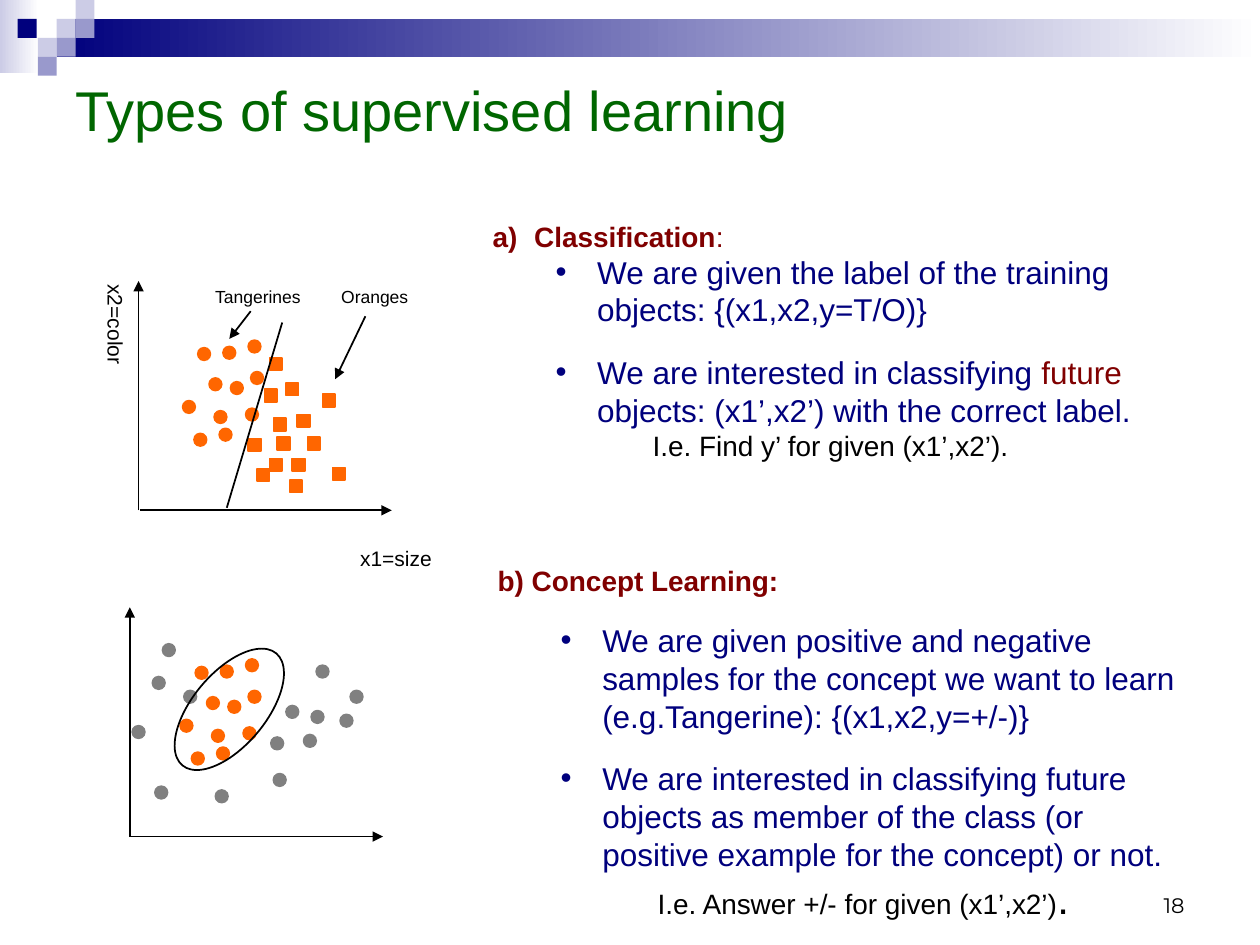
from dataclasses import dataclass

from lxml.etree import SubElement
from pptx import Presentation
from pptx.dml.color import RGBColor as RGB
from pptx.enum.shapes import MSO_CONNECTOR as LINE, MSO_SHAPE as SHAPE
from pptx.enum.text import MSO_ANCHOR as ANCHOR, PP_ALIGN as ALIGN
from pptx.oxml.ns import qn
from pptx.util import Inches, Pt


@dataclass(frozen=True)
class Theme:
    font: str = "Arial"
    number_font: str = "Montserrat"
    black: str = "000000"
    white: str = "FFFFFF"
    navy: str = "00007D"
    lilac: str = "CCCCE6"
    violet: str = "9999CC"
    green: str = "006600"
    maroon: str = "800000"
    orange: str = "FF6600"
    gray: str = "808080"
    title: int = 32
    body: int = 18
    heading: int = 16
    axis: int = 12
    label: int = 10
    stop: int = 24
    gap: int = 14
    line: int = 1


T = Theme()
DOT = 0.1
TILE = 0.15

SQUARES = [(1.97, 3.48), (2.17, 3.32), (2.2, 3.47), (2.04, 3.72), (2.44, 3.47),
           (2.32, 3.64), (2.56, 3.13), (2.14, 3.64), (2.27, 3.04), (2.3, 3.81),
           (2.64, 3.71), (2.36, 3.29), (2.1, 3.09), (2.14, 2.84)]
TANGERINES = [(1.66, 3), (1.95, 3.24), (1.57, 2.76), (1.54, 3.44), (1.45, 3.18),
              (1.77, 2.75), (1.7, 3.26), (1.99, 2.95), (1.74, 3.4), (1.83, 3.03),
              (1.97, 2.7)]
NEGATIVES = [(2.47, 5.64), (2.78, 5.48), (2.51, 5.28), (2.7, 5.67), (2.27, 5.6),
             (2.15, 5.85), (1.71, 6.27), (2.41, 5.83), (1.21, 5.37), (2.17, 6.14),
             (1.05, 5.76), (1.29, 5.11), (1.46, 5.48), (1.23, 6.24)]
TILES = [(0.45, 0.15, T.lilac), (0.6, 0, T.lilac), (0.6, 0.15, T.violet),
         (0.3, 0.3, T.lilac), (0.14, 0.15, T.navy), (0.45, 0.3, T.violet),
         (0.3, 0.45, T.violet)]


def set_all(obj, values):
    for name, value in values.items():
        setattr(obj, name, value)


def run(text, size, color, bold=False, font=T.font):
    return text, size, color, bold, font


def para(*runs, **fmt):
    return runs, fmt


def add_para(p, runs, fmt):
    left, hang, bullet = fmt.get("left", 0), fmt.get("hang", 0), fmt.get("bullet")
    pPr = p._p.get_or_add_pPr()
    pPr.set("marL", str(Inches(left)))
    pPr.set("indent", str(-Inches(hang)))
    if bullet == "a)":
        SubElement(pPr, qn("a:buAutoNum"), type="alphaLcParenR")
    elif bullet:
        SubElement(pPr, qn("a:buFont"), typeface=T.font)
        SubElement(pPr, qn("a:buChar"), char=bullet)
    if "tab" in fmt:
        tabs = SubElement(pPr, qn("a:tabLst"))
        SubElement(tabs, qn("a:tab"), pos=str(Inches(fmt["tab"])), algn="l")
    if "before" in fmt:
        p.space_before = Pt(fmt["before"])
    p.alignment = fmt.get("align", ALIGN.LEFT)
    for text, size, color, bold, font in runs:
        r = p.add_run()
        r.text = text
        set_all(r.font, {"size": Pt(size), "bold": bold, "name": font})
        r.font.color.rgb = RGB.from_string(color)


def add_text(s, box, paras, inset=(0.1, 0.05, 0.1, 0.05), anchor=ANCHOR.TOP,
             wrap=True, vert=None):
    tf = s.shapes.add_textbox(*map(Inches, box)).text_frame
    sides = ("margin_left", "margin_top", "margin_right", "margin_bottom")
    set_all(tf, dict(zip(sides, map(Inches, inset))))
    set_all(tf, {"word_wrap": wrap, "vertical_anchor": anchor})
    if vert:
        tf._txBody.bodyPr.set("vert", vert)
    for i, (runs, fmt) in enumerate(paras):
        add_para(tf.add_paragraph() if i else tf.paragraphs[0], runs, fmt)


def add_shape(s, kind, box, fill=None, line=None, rotation=0):
    sp = s.shapes.add_shape(kind, *map(Inches, box))
    sp.shadow.inherit = False
    sp.rotation = rotation
    if fill:
        sp.fill.solid()
        sp.fill.fore_color.rgb = RGB.from_string(fill)
    else:
        sp.fill.background()
    if line:
        sp.line.color.rgb = RGB.from_string(line)
        sp.line.width = Pt(T.line)
    else:
        sp.line.fill.background()
    return sp


def add_gradient(s, box, start):
    fill = add_shape(s, SHAPE.RECTANGLE, box).fill
    fill.gradient()
    fill.gradient_angle = 0
    for stop, color, position in zip(fill.gradient_stops, (start, T.white), (0, 1)):
        stop.color.rgb = RGB.from_string(color)
        stop.position = position


def add_line(s, start, end, arrow=True):
    ln = s.shapes.add_connector(LINE.STRAIGHT, *map(Inches, start + end))
    ln.line.color.rgb = RGB.from_string(T.black)
    ln.line.width = Pt(T.line)
    if arrow:
        SubElement(ln.line._get_or_add_ln(), qn("a:tailEnd"), type="triangle")
    SubElement(ln._element.spPr, qn("a:effectLst"))


def add_axes(s, x, y):
    add_line(s, (x + 0.01, y), (x + 2.01, y))
    add_line(s, (x, y), (x, y - 1.82))


def add_dots(s, kind, points, color, dx=0, dy=0):
    for x, y in points:
        add_shape(s, kind, (x + dx, y + dy, DOT, DOT), color, color)


def add_header(s):
    add_gradient(s, (0, 0, 0.31, 0.58), T.lilac)
    add_gradient(s, (0.45, 0.15, 9.55, 0.3), T.navy)
    for x, y, color in TILES:
        add_shape(s, SHAPE.RECTANGLE, (x, y, TILE, TILE), color)
    add_text(s, (0.5, 0.5, 9, 0.73),
             [para(run("Types of supervised learning", T.title, T.green))],
             anchor=ANCHOR.MIDDLE)
    add_text(s, (7.17, 6.83, 2.33, 0.5),
             [para(run("18", T.axis, T.black, font=T.number_font), align=ALIGN.RIGHT)],
             anchor=ANCHOR.BOTTOM)


def add_classification_plot(s):
    add_axes(s, 1.1, 4.05)
    add_dots(s, SHAPE.RECTANGLE, SQUARES, T.orange)
    add_dots(s, SHAPE.OVAL, TANGERINES, T.orange)
    add_text(s, (2.76, 4.28, 0.84, 0.29),
             [para(run("x1=size", T.axis, T.black))], wrap=False)
    add_text(s, (0.67, 2.16, 0.4, 0.73),
             [para(run("x2=color", T.axis, T.black))], wrap=False, vert="eaVert")
    add_text(s, (1.61, 2.22, 1.72, 0.27),
             [para(run("Tangerines\tOranges", T.label, T.black), tab=0.99)],
             inset=(0.1, 0.05, 0, 0.05))
    add_line(s, (1.99, 2.47), (1.82, 2.69))
    add_line(s, (2.9, 2.51), (2.66, 3.01))
    add_line(s, (2.24, 2.56), (1.8, 4.03), arrow=False)


def add_concept_plot(s):
    add_axes(s, 1.03, 6.64)
    add_dots(s, SHAPE.OVAL, TANGERINES, T.orange, -0.02, 2.53)
    add_dots(s, SHAPE.OVAL, NEGATIVES, T.gray)
    add_shape(s, SHAPE.FLOWCHART_CONNECTOR, (1.53, 5.05, 0.58, 1.16),
              line=T.black, rotation=40)


def add_explanations(s):
    inset = (0.05,) * 4
    bullet = {"left": 0.83, "hang": 0.33, "bullet": "•"}
    spaced = {**bullet, "before": T.gap}
    add_text(s, (3.86, 1.69, 5.77, 2.7), [
        para(run("Classification", T.heading, T.maroon, True),
             run(":", T.heading, T.maroon), left=0.33, hang=0.33, bullet="a)"),
        para(run("We are given the label of the training objects: {(x1,x2,y=T/O)}",
                 T.body, T.navy), **bullet),
        para(run("We are interested in classifying ", T.body, T.navy),
             run("future", T.body, T.maroon),
             run(" objects: (x1’,x2’) with the correct label.", T.body, T.navy),
             **spaced),
        para(run("I.e. Find y’ for given (x1’,x2’).", T.heading, T.black), left=1.27),
    ], inset)
    add_text(s, (3.9, 4.42, 5.65, 3), [
        para(run("b) Concept Learning:", T.heading, T.maroon, True)),
        para(run("We are given positive and negative samples for the concept we want "
                 "to learn (e.g.Tangerine): {(x1,x2,y=+/-)}", T.body, T.navy), **spaced),
        para(run("We are interested in classifying future objects as member of the "
                 "class (or positive example for the concept) or not.",
                 T.body, T.navy), **spaced),
        para(run("I.e. Answer +/- for given (x1’,x2’)", T.heading, T.black),
             run(".", T.stop, T.black), left=1.27),
    ], inset)


def main():
    prs = Presentation()
    set_all(prs, {"slide_width": Inches(10), "slide_height": Inches(7.5)})
    s = prs.slides.add_slide(prs.slide_layouts[6])
    add_header(s)
    add_classification_plot(s)
    add_concept_plot(s)
    add_explanations(s)
    prs.save("out.pptx")


if __name__ == "__main__":
    main()
